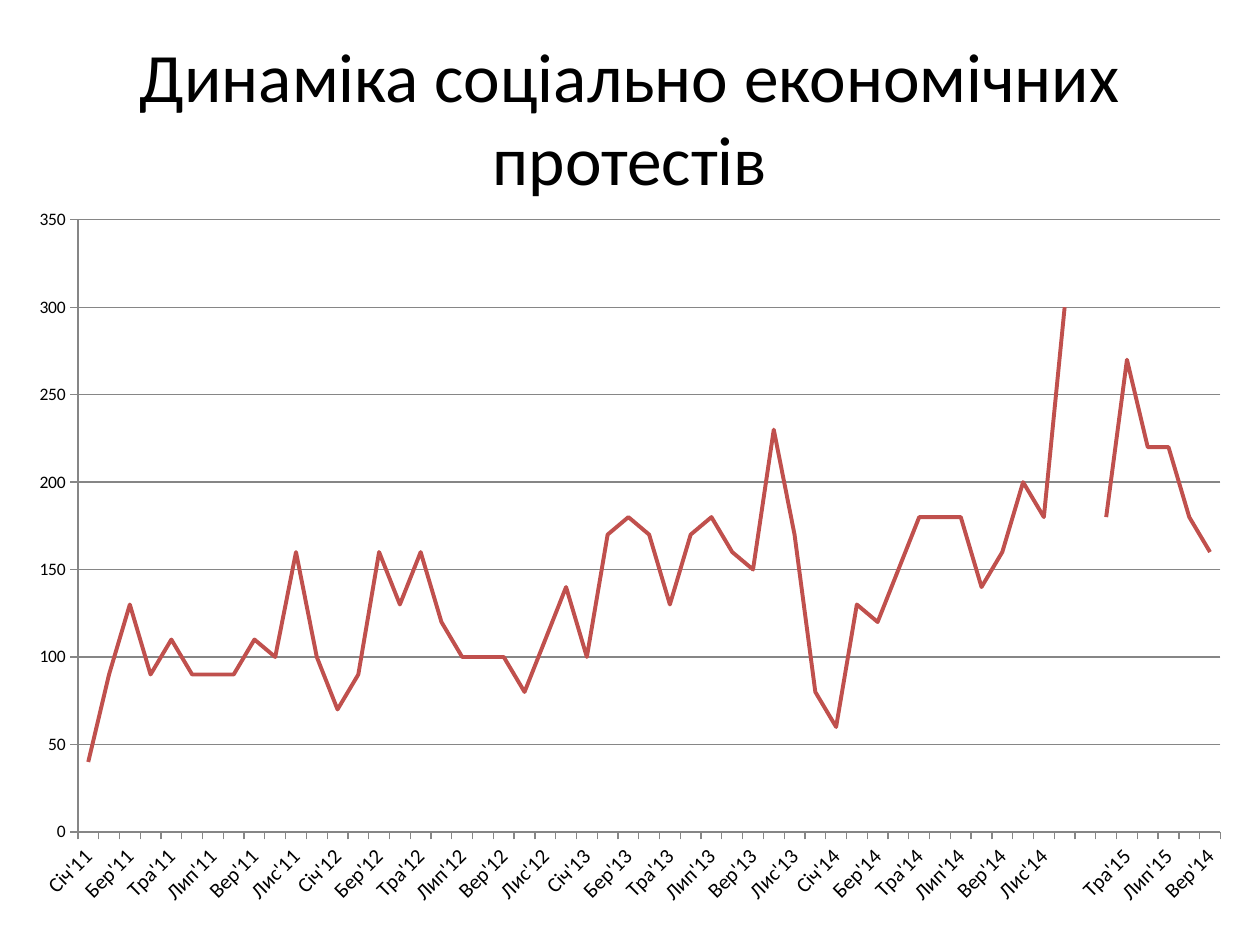
from pptx import Presentation
from pptx.chart.data import CategoryChartData
from pptx.dml.color import RGBColor
from pptx.enum.chart import XL_CHART_TYPE, XL_TICK_LABEL_POSITION, XL_TICK_MARK
from pptx.enum.text import MSO_ANCHOR, MSO_AUTO_SIZE, PP_ALIGN
from pptx.oxml import parse_xml
from pptx.oxml.ns import nsdecls
from pptx.util import Cm, Pt

LINE = XL_CHART_TYPE.LINE
TICK_OUT, TICK_NONE = XL_TICK_MARK.OUTSIDE, XL_TICK_MARK.NONE
LABELS_LOW = XL_TICK_LABEL_POSITION.LOW
MIDDLE, CENTER = MSO_ANCHOR.MIDDLE, PP_ALIGN.CENTER
NO_AUTOFIT = MSO_AUTO_SIZE.NONE
TITLE_ONLY = 5

FONT = "Calibri"
BLACK, GREY, RED = "000000", "868686", "C0504D"

TITLE = "Динаміка соціально економічних протестів"
MONTH_NAMES = ["Січ", "Лют", "Бер", "Кві", "Тра", "Чер",
               "Лип", "Сер", "Вер", "Жов", "Лис", "Гру"]
MONTHS = [f"{name}'{year}" for year in range(11, 15) for name in MONTH_NAMES]
# A gap precedes 2015; the last month carries the year 14 on the slide
MONTHS += [""] + [f"{name}'15" for name in MONTH_NAMES[3:8]] + ["Вер'14"]
PROTESTS = [
    40, 90, 130, 90, 110, 90, 90, 90, 110, 100, 160, 100,
    70, 90, 160, 130, 160, 120, 100, 100, 100, 80, 110, 140,
    100, 170, 180, 170, 130, 170, 180, 160, 150, 230, 170, 80,
    60, 130, 120, 150, 180, 180, 180, 140, 160, 200, 180, 300,
    None, 180, 270, 220, 220, 180, 160,
]


def rgb(value):
    return RGBColor.from_string(value)


def set_all(target, values):
    for name, value in values.items():
        setattr(target, name, value)


def format_font(font, size):
    set_all(font, {"name": FONT, "size": Pt(size), "bold": False})
    font.color.rgb = rgb(BLACK)


def format_line(line, color, width):
    line.color.rgb = rgb(color)
    line.width = Pt(width)


def add_title(slide):
    title = slide.shapes.title
    set_all(title, {"left": Cm(1.27), "top": Cm(0.76),
                    "width": Cm(22.86), "height": Cm(3.18)})
    frame = title.text_frame
    frame.text = TITLE
    set_all(frame, {"vertical_anchor": MIDDLE, "word_wrap": True,
                    "auto_size": NO_AUTOFIT})
    heading = frame.paragraphs[0]
    heading.alignment = CENTER
    format_font(heading.runs[0].font, 39.6)


def format_month_axis(axis):
    set_all(axis, {"major_tick_mark": TICK_OUT, "minor_tick_mark": TICK_NONE,
                   "tick_label_position": LABELS_LOW})
    format_font(axis.tick_labels.font, 12)
    format_line(axis.format.line, GREY, 0.75)
    # Slanted labels, one for every second month
    axis_xml = axis.tick_labels._element
    axis_xml.txPr.bodyPr.set("rot", "-2700000")
    skip = parse_xml(f'<c:tickLblSkip {nsdecls("c")} val="2"/>')
    axis_xml.find("{*}noMultiLvlLbl").addprevious(skip)


def format_count_axis(axis):
    set_all(axis, {"minimum_scale": 0, "maximum_scale": 350, "major_unit": 50,
                   "major_tick_mark": TICK_OUT, "minor_tick_mark": TICK_NONE,
                   "has_major_gridlines": True})
    format_font(axis.tick_labels.font, 10)
    format_line(axis.format.line, GREY, 0.75)
    format_line(axis.major_gridlines.format.line, GREY, 0.75)


def add_protest_chart(slide):
    data = CategoryChartData()
    data.categories = MONTHS
    data.add_series("Series 1", PROTESTS)
    chart = slide.shapes.add_chart(
        LINE, Cm(0.3), Cm(3.94), Cm(24.8), Cm(14.6), data).chart
    set_all(chart, {"has_title": False, "has_legend": False})
    format_font(chart.font, 10)
    format_month_axis(chart.category_axis)
    format_count_axis(chart.value_axis)

    plot = chart.plots[0]
    plot.vary_by_categories = False
    protests = plot.series[0]
    protests.smooth = False
    format_line(protests.format.line, RED, 2.25)


def main():
    deck = Presentation()
    set_all(deck, {"slide_width": Cm(25.4), "slide_height": Cm(19.05)})
    slide = deck.slides.add_slide(deck.slide_layouts[TITLE_ONLY])
    add_title(slide)
    add_protest_chart(slide)
    deck.save("out.pptx")


if __name__ == "__main__":
    main()
